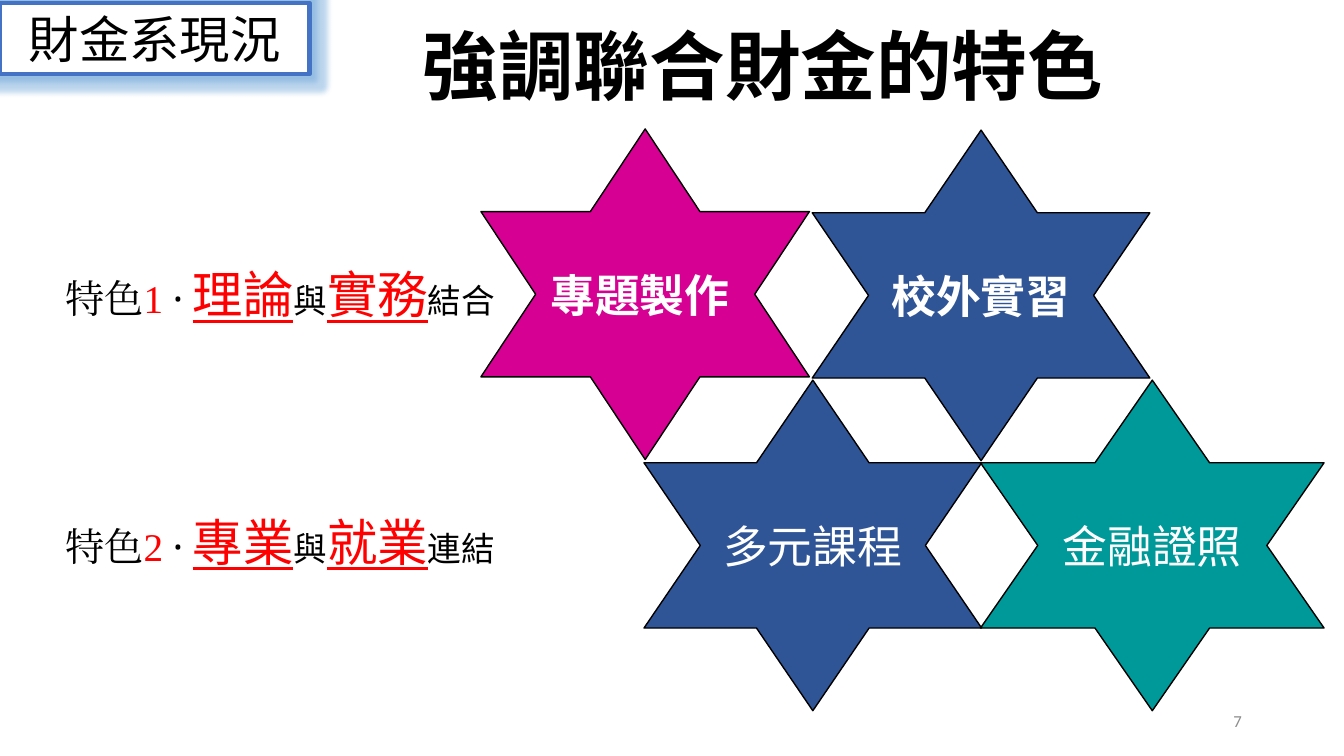
from lxml import etree
from pptx import Presentation
from pptx.dml.color import RGBColor
from pptx.enum.shapes import MSO_SHAPE
from pptx.enum.text import MSO_ANCHOR, PP_ALIGN
from pptx.oxml.ns import qn
from pptx.util import Cm, Pt

STAR = MSO_SHAPE.STAR_6_POINT
RECTANGLE = MSO_SHAPE.RECTANGLE
MIDDLE = MSO_ANCHOR.MIDDLE
LEFT, CENTER, RIGHT = PP_ALIGN.LEFT, PP_ALIGN.CENTER, PP_ALIGN.RIGHT

BLACK = RGBColor(0x00, 0x00, 0x00)
WHITE = RGBColor(0xFF, 0xFF, 0xFF)
RED = RGBColor(0xFF, 0x00, 0x00)
GRAY = RGBColor(0x8C, 0x8C, 0x8C)
MAGENTA = RGBColor(0xD6, 0x00, 0x93)
NAVY = RGBColor(0x2F, 0x55, 0x97)
TEAL = RGBColor(0x00, 0x99, 0x99)
BORDER_BLUE = RGBColor(0x44, 0x72, 0xC4)
GLOW_BLUE = RGBColor(0x5B, 0x9B, 0xD5)

SANS = "Noto Sans CJK SC"
SERIF = "Times New Roman"
LATIN = "Calibri"
EAST_ASIAN_FONTS = {SANS: SANS, SERIF: SERIF, LATIN: SANS}


def style_span(span, size, color, font=SANS, bold=False, underline=False):
    span.font.size = Pt(size)
    span.font.color.rgb = color
    span.font.name = font
    span.font.bold = bold
    span.font.underline = underline
    east_asian = etree.SubElement(span.font._element, qn("a:ea"))
    east_asian.set("typeface", EAST_ASIAN_FONTS[font])


def add_span(para, text, *style, **options):
    span = para.add_run()
    span.text = text
    style_span(span, *style, **options)


def add_text(page, frame, align):
    box = page.shapes.add_textbox(*map(Cm, frame))
    box.text_frame.word_wrap = True
    box.text_frame.vertical_anchor = MIDDLE
    para = box.text_frame.paragraphs[0]
    para.alignment = align
    return para


def add_filled_shape(page, kind, frame, fill, line, line_width):
    shape = page.shapes.add_shape(kind, *map(Cm, frame))
    shape.shadow.inherit = False
    shape.fill.solid()
    shape.fill.fore_color.rgb = fill
    shape.line.color.rgb = line
    shape.line.width = Pt(line_width)
    shape.text_frame.word_wrap = False
    shape.text_frame.vertical_anchor = MIDDLE
    shape.text_frame.paragraphs[0].alignment = CENTER
    return shape


def add_star(page, text, left, top, width, fill, bold):
    star = add_filled_shape(page, STAR, (left, top, width, 8.33), fill, BLACK, 1)
    add_span(star.text_frame.paragraphs[0], text, 32, WHITE, bold=bold)


def add_feature(page, top, height, number, first, second, ending):
    para = add_text(page, (1.4, top, 12.93, height), LEFT)
    para.line_spacing = 0.9
    add_span(para, "特色", 28, BLACK, SERIF)
    add_span(para, f"{number} ", 28, RED, SERIF)
    add_span(para, "․ ", 28, BLACK, SERIF)
    add_span(para, first, 36, RED, underline=True)
    add_span(para, "與", 24, BLACK)
    add_span(para, second, 36, RED, underline=True)
    add_span(para, ending, 24, BLACK)


def add_glow(shape, color, radius, opacity):
    effects = shape._element.spPr.find(qn("a:effectLst"))
    glow = etree.SubElement(effects, qn("a:glow"), rad=str(Pt(radius)))
    tint = etree.SubElement(glow, qn("a:srgbClr"), val=str(color))
    etree.SubElement(tint, qn("a:alpha"), val=str(opacity * 1000))


def add_section_label(page):
    label = add_filled_shape(page, RECTANGLE, (0, 0.07, 7.8, 1.8),
                             WHITE, BORDER_BLUE, 3)
    add_glow(label, GLOW_BLUE, 8, 40)
    para = label.text_frame.paragraphs[0]
    add_span(para, "財金系", 36, BLACK, LATIN)
    add_span(para, "現況", 36, BLACK)


def main():
    deck = Presentation()
    deck.slide_width, deck.slide_height = Cm(33.87), Cm(19.05)
    page = deck.slides.add_slide(deck.slide_layouts[6])

    number = add_text(page, (23.93, 17.65, 7.62, 1.02), RIGHT)
    add_span(number, "7", 12, GRAY, LATIN)

    add_star(page, "專題製作 ", 12.12, 3.25, 8.28, MAGENTA, True)
    add_star(page, "多元課程", 16.23, 9.58, 8.51, NAVY, False)
    add_star(page, "金融證照", 24.71, 9.58, 8.66, TEAL, False)

    add_feature(page, 6.1, 2.79, 1, "理論", "實務", "結合")
    add_feature(page, 11.94, 3.58, 2, "專業", "就業", "連結")

    title = add_text(page, (9.37, 0.56, 19.71, 2.11), CENTER)
    add_span(title, "強調聯合財金的特色", 54, BLACK, bold=True)

    add_star(page, "校外實習", 20.47, 3.28, 8.51, NAVY, True)
    add_section_label(page)
    deck.save("out.pptx")


if __name__ == "__main__":
    main()
